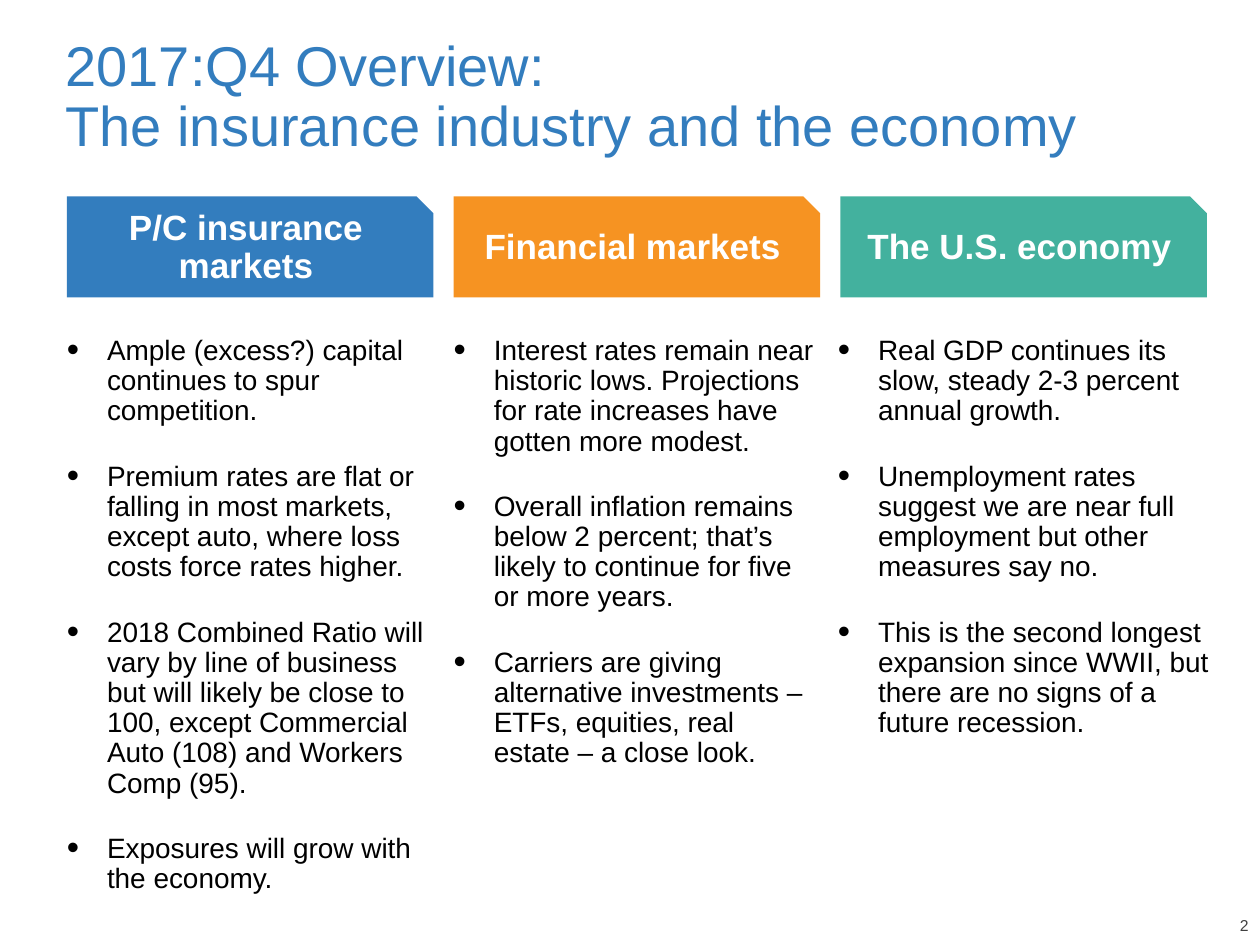
from lxml import etree
from pptx import Presentation
from pptx.dml.color import RGBColor
from pptx.enum.shapes import MSO_SHAPE
from pptx.enum.text import MSO_ANCHOR, MSO_AUTO_SIZE, PP_ALIGN
from pptx.oxml.ns import qn
from pptx.util import Pt

SNIP = MSO_SHAPE.SNIP_1_RECTANGLE
TOP, MIDDLE, BOTTOM = MSO_ANCHOR.TOP, MSO_ANCHOR.MIDDLE, MSO_ANCHOR.BOTTOM
LEFT, CENTER, RIGHT = PP_ALIGN.LEFT, PP_ALIGN.CENTER, PP_ALIGN.RIGHT

FONT = "Arial"
HEX = {"blue": "337DBE", "orange": "F69322", "green": "43B19E",
       "black": "000000", "white": "FFFFFF", "gray": "404040"}

# Header, colour, body left, width and height, points
COLUMNS = [
    ("P/C insurance markets", "blue", 38.16, 209.5, 324.7, [
        "Ample (excess?) capital continues to spur competition.",
        "Premium rates are flat or falling in most markets, except auto, "
        "where loss costs force rates higher.",
        "2018 Combined Ratio will vary by line of business but will likely "
        "be close to 100, except Commercial Auto (108) and Workers Comp (95).",
        "Exposures will grow with the economy."]),
    ("Financial markets", "orange", 259.2, 205.9, 279.4, [
        "Interest rates remain near historic lows. Projections for rate "
        "increases have gotten more modest.",
        "Overall inflation remains below 2 percent; that’s likely to "
        "continue for five or more years.",
        "Carriers are giving alternative investments – ETFs, equities, "
        "real estate – a close look."]),
    ("The U.S. economy", "green", 478.8, 216, 245.5, [
        "Real GDP continues its slow, steady 2-3 percent annual growth.",
        "Unemployment rates suggest we are near full employment but other "
        "measures say no.",
        "This is the second longest expansion since WWII, but there are no "
        "signs of a future recession."]),
]


def rgb(name):
    return RGBColor.from_string(HEX[name])


def place(shape, box):
    shape.left, shape.top, shape.width, shape.height = map(Pt, box)


def bullet(para, indent=23):
    props = para._p.get_or_add_pPr()
    props.set("marL", str(Pt(indent)))
    props.set("indent", str(-Pt(indent)))
    color = etree.SubElement(props, qn("a:buClr"))
    etree.SubElement(color, qn("a:srgbClr"), val=HEX["black"])
    etree.SubElement(props, qn("a:buSzPct"), val="125000")
    etree.SubElement(props, qn("a:buFont"), typeface=FONT)
    etree.SubElement(props, qn("a:buChar"), char="•")


def write(shape, *lines, size=16, color="black", bold=False, align=LEFT,
          anchor=TOP, inset=(0, 0, 0, 0), before=0, spacing=0.9, dots=False):
    """Fill a shape with one paragraph per line; inset is left, top, right, bottom."""
    frame = shape.text_frame
    frame.word_wrap = True
    frame.auto_size = MSO_AUTO_SIZE.NONE
    frame.vertical_anchor = anchor
    (frame.margin_left, frame.margin_top,
     frame.margin_right, frame.margin_bottom) = map(Pt, inset)
    frame.text = "\n".join(lines)
    for para in frame.paragraphs:
        para.alignment = align
        para.line_spacing = spacing
        para.space_before, para.space_after = Pt(before), Pt(0)
        if dots:
            bullet(para)
        for run in para.runs:
            font = run.font
            font.name, font.size, font.bold = FONT, Pt(size), bold
            font.color.rgb = rgb(color)


def heading(slide, box):
    place(slide.shapes.title, box)
    write(slide.shapes.title,
          "2017:Q4 Overview:\vThe insurance industry and the economy",
          size=32, color="blue", inset=(7.2, 3.6, 7.2, 3.6))


def header(slide, box, text, color):
    tab = slide.shapes.add_shape(SNIP, *map(Pt, box))
    tab.shadow.inherit = False
    tab.fill.solid()
    tab.fill.fore_color.rgb = rgb(color)
    tab.line.fill.background()
    write(tab, text, size=20, color="white", bold=True, align=CENTER,
          anchor=MIDDLE, inset=(7.2, 3.6, 7.2, 7.2))


def points(body, box, lines):
    place(body, box)
    write(body, *lines, inset=(0, 3.6, 0, 3.6), before=20, dots=True)


def columns(slide, box):
    """Three headers on an even grid, each with its list below."""
    left, top, width, height = box
    gap = 11.5
    wide = (width - 2 * gap) / 3
    bodies = [slide.placeholders[i] for i in (1, 2, 4)]
    for i, (text, color, x, w, h, lines) in enumerate(COLUMNS):
        header(slide, (left + i * (wide + gap), top, wide, 57.6), text, color)
        points(bodies[i], (x, top + height - 324.7, w, h), lines)


def number(slide, box):
    write(slide.shapes.add_textbox(*map(Pt, box)), "2", size=9, color="gray",
          align=RIGHT, anchor=BOTTOM)


def main():
    deck = Presentation()
    deck.slide_width, deck.slide_height = Pt(720), Pt(540)
    slide = deck.slides.add_slide(deck.slide_layouts[4])
    spare = slide.placeholders[3].element
    spare.getparent().remove(spare)
    heading(slide, (30.24, 18, 666, 75))
    columns(slide, (38.16, 112.3, 651.5, 401))
    number(slide, (679, 525, 34.5, 9.4))
    deck.save("out.pptx")


if __name__ == "__main__":
    main()
